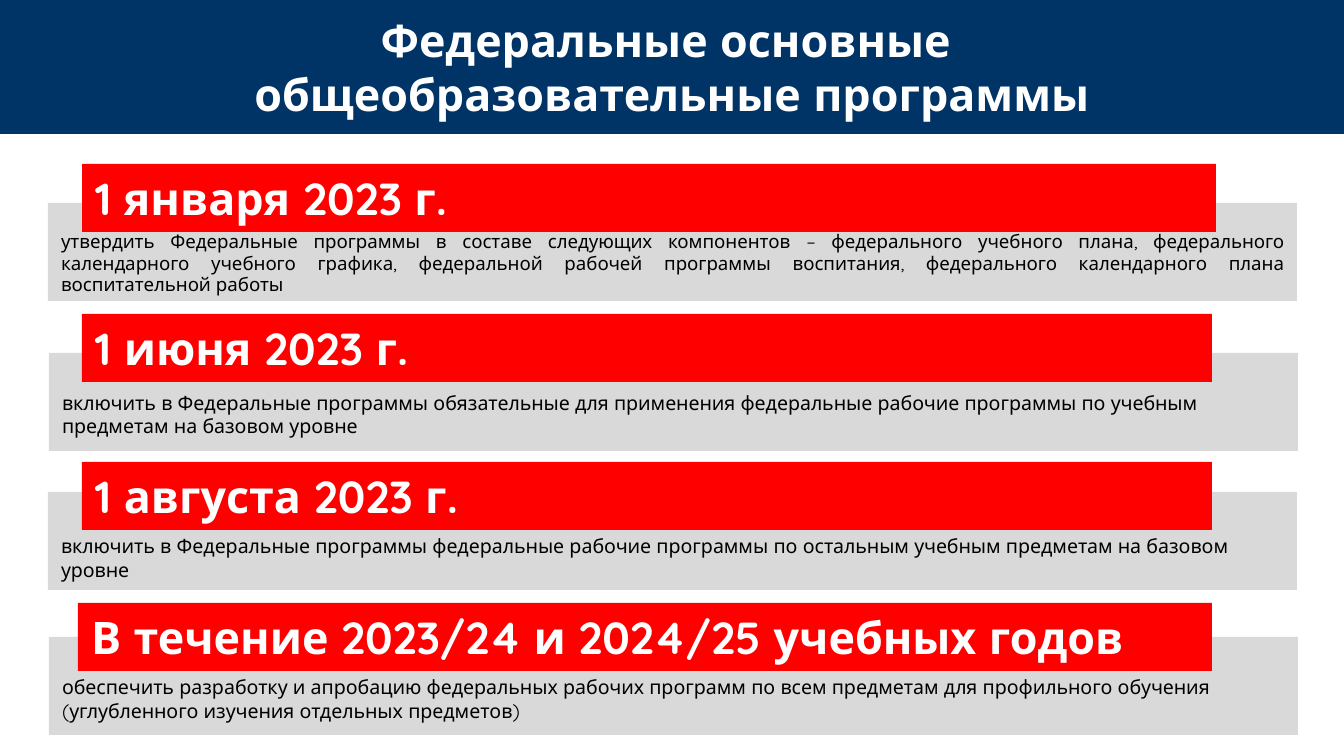
from pptx import Presentation
from pptx.dml.color import RGBColor
from pptx.enum.shapes import MSO_SHAPE as Shape
from pptx.enum.text import MSO_ANCHOR as Anchor, PP_ALIGN as Align
from pptx.util import Emu, Pt

PX = 914400 / 134.4
NAVY, RED, GREY, WHITE, BLACK = "003366", "FF0000", "D9D9D9", "FFFFFF", "000000"
HEADING = {"name": "Quicksand", "size": Pt(24), "bold": True}
BODY = {"name": "Quicksand", "size": Pt(10.5), "bold": False}
SMALL = {**BODY, "size": Pt(10)}
LEFT = {"alignment": Align.LEFT}
CENTER = {"alignment": Align.CENTER}
JUSTIFIED = {"alignment": Align.JUSTIFY, "line_spacing": 0.95}
BANNER_HEIGHT, PANEL_HEIGHT = 68, 98

MILESTONES = [
    ("1 января 2023 г.", (82, 164, 1134), (48, 203), 29, SMALL, JUSTIFIED,
     "утвердить Федеральные программы в составе следующих компонентов – "
     "федерального учебного плана, федерального календарного учебного графика, "
     "федеральной рабочей программы воспитания, федерального календарного плана "
     "воспитательной работы"),
    ("1 июня 2023 г.", (82, 314, 1130), (49, 353), 38, BODY, LEFT,
     "включить в Федеральные программы обязательные для применения федеральные "
     "рабочие программы по учебным предметам на базовом уровне"),
    ("1 августа 2023 г.", (82, 462, 1130), (48, 492), 42, BODY, LEFT,
     "включить в Федеральные программы федеральные рабочие программы по остальным "
     "учебным предметам на базовом уровне"),
    ("В течение 2023/24 и 2024/25 учебных годов", (78, 603, 1134), (49, 637), 38, BODY, LEFT,
     "обеспечить разработку и апробацию федеральных рабочих программ по всем "
     "предметам для профильного обучения (углубленного изучения отдельных предметов)"),
]


def px(value):
    return Emu(round(value * PX))


def color(value):
    return RGBColor.from_string(value)


def apply(target, values):
    for name, value in values.items():
        setattr(target, name, value)


class Deck:
    """Holds the style and the current slide."""

    def __init__(self, width, height):
        self.presentation = Presentation()
        apply(self.presentation, {"slide_width": px(width), "slide_height": px(height)})
        self.slide = self.presentation.slides.add_slide(self.presentation.slide_layouts[6])

    def box(self, left, top, width, height, fill, lines, font, ink, layout, inset):
        shape = self.slide.shapes.add_shape(
            Shape.RECTANGLE, px(left), px(top), px(width), px(height))
        shape.shadow.inherit = False
        shape.fill.solid()
        shape.fill.fore_color.rgb = color(fill)
        shape.line.fill.background()
        frame = shape.text_frame
        apply(frame, {"word_wrap": True, "vertical_anchor": Anchor.TOP,
                      "margin_left": px(13), "margin_right": px(13),
                      "margin_top": px(inset), "margin_bottom": px(0)})
        paragraph = frame.paragraphs[0]
        apply(paragraph, layout)
        for index, line in enumerate(lines):
            if index:
                paragraph.add_line_break()
            run = paragraph.add_run()
            run.text = line
            apply(run.font, font)
            run.font.color.rgb = color(ink)

    def title(self, lines):
        self.box(0, 0, 1344, 134, NAVY, lines, HEADING, WHITE, CENTER, 13)

    def panel(self, left, top, inset, text, font, layout):
        self.box(left, top, 1249, PANEL_HEIGHT, GREY, [text], font, BLACK, layout, inset)

    def banner(self, left, top, width, text):
        self.box(left, top, width, BANNER_HEIGHT, RED, [text], HEADING, WHITE, LEFT, 7)


def main():
    deck = Deck(1344, 756)
    deck.title(["Федеральные основные ", "общеобразовательные программы"])
    for date, banner, panel, inset, font, layout, task in MILESTONES:
        deck.panel(*panel, inset, task, font, layout)
        deck.banner(*banner, date)
    deck.presentation.save("out.pptx")


if __name__ == "__main__":
    main()
